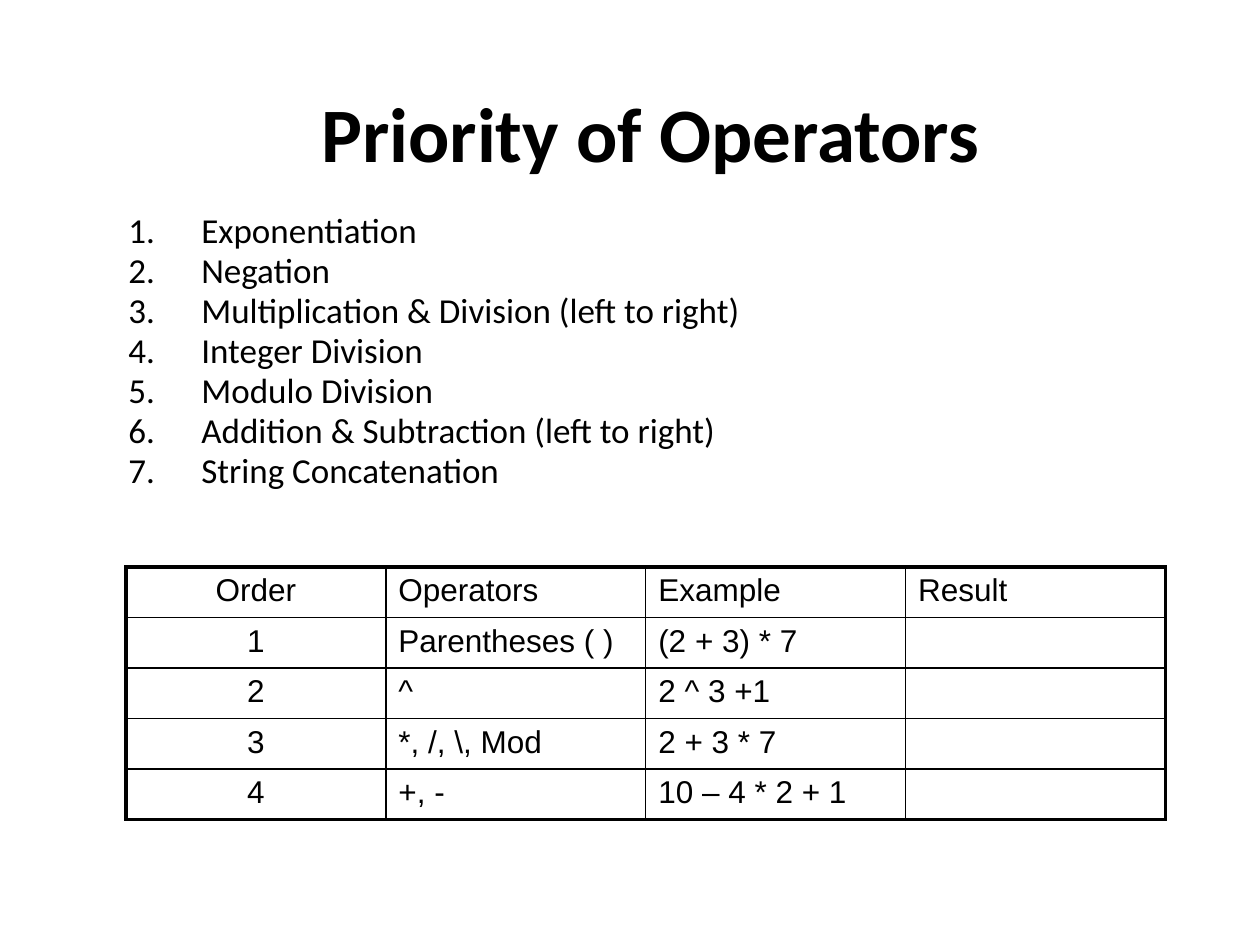
from lxml import etree
from pptx import Presentation
from pptx import util as u
from pptx.dml.color import RGBColor
from pptx.enum import text
from pptx.oxml import ns

BLACK = RGBColor(0x00, 0x00, 0x00)
THIN, THICK = u.Pt(1), u.Pt(2.25)

PRIORITIES = [
    "Exponentiation",
    "Negation",
    "Multiplication & Division (left to right)",
    "Integer Division",
    "Modulo Division",
    "Addition & Subtraction (left to right)",
    "String Concatenation",
]
OPERATORS = [
    ["Order", "Operators", "Example", "Result"],
    ["1", "Parentheses ( )", "(2 + 3) * 7", ""],
    ["2", "^", "2 ^ 3 +1", ""],
    ["3", "*, /, \\, Mod", "2 + 3 * 7", ""],
    ["4", "+, -", "10 – 4 * 2 + 1", ""],
]


def write(para, words, size, font, bold=False, align=text.PP_ALIGN.LEFT):
    para.alignment = align
    if words:
        span = para.add_run()
        span.text = words
        span.font.size = u.Pt(size)
        span.font.name = font
        span.font.bold = bold
        span.font.color.rgb = BLACK


def number(para, indent):
    properties = para._p.get_or_add_pPr()
    properties.set("marL", str(indent))
    properties.set("indent", str(-indent))
    etree.SubElement(properties, ns.qn("a:buFont"), typeface="+mj-lt")
    etree.SubElement(properties, ns.qn("a:buAutoNum"), type="arabicPeriod")


def border(cell, side, width):
    properties = cell._tc.get_or_add_tcPr()
    line = etree.SubElement(properties, ns.qn(f"a:ln{side}"), w=str(width))
    fill = etree.SubElement(line, ns.qn("a:solidFill"))
    etree.SubElement(fill, ns.qn("a:srgbClr"), val=str(BLACK))


class SlideBuilder:
    heading_font = "Calibri"
    table_font = "Arial"

    def __init__(self, slide):
        self.slide = slide

    def frame(self, left, top, width, height, anchor):
        box = self.slide.shapes.add_textbox(
            u.Inches(left), u.Inches(top), u.Inches(width), u.Inches(height))
        box.text_frame.word_wrap = True
        box.text_frame.vertical_anchor = anchor
        return box.text_frame

    def title(self, words, *place):
        frame = self.frame(*place, text.MSO_ANCHOR.MIDDLE)
        write(frame.paragraphs[0], words, 44, self.heading_font, bold=True,
              align=text.PP_ALIGN.CENTER)

    def numbered_list(self, items, *place):
        frame = self.frame(*place, text.MSO_ANCHOR.TOP)
        for index, item in enumerate(items):
            para = frame.add_paragraph() if index else frame.paragraphs[0]
            para.line_spacing = 0.8
            para.space_before = u.Pt(3.6)
            write(para, item, 20, self.heading_font)
            number(para, u.Inches(0.58))

    def table(self, rows, left, top, width, row_height):
        last_row, last_column = len(rows) - 1, len(rows[0]) - 1
        grid = self.slide.shapes.add_table(
            len(rows), len(rows[0]), u.Inches(left), u.Inches(top),
            u.Inches(width), u.Inches(row_height * len(rows))).table
        grid.first_row = grid.horz_banding = False
        for r, row in enumerate(rows):
            for c, words in enumerate(row):
                cell = grid.cell(r, c)
                align = text.PP_ALIGN.LEFT if c else text.PP_ALIGN.CENTER
                write(cell.text_frame.paragraphs[0], words, 18,
                      self.table_font, align=align)
                edges = {"L": c == 0, "R": c == last_column,
                         "T": r == 0, "B": r == last_row}
                for side, outer in edges.items():
                    border(cell, side, THICK if outer else THIN)
                cell.fill.background()


def main():
    deck = Presentation()
    deck.slide_width, deck.slide_height = u.Inches(10), u.Inches(7.5)
    builder = SlideBuilder(deck.slides.add_slide(deck.slide_layouts[6]))
    builder.title("Priority of Operators", 0.83, 0.42, 8.67, 1.25)
    builder.numbered_list(PRIORITIES, 0.92, 1.67, 8, 2.12)
    builder.table(OPERATORS, 1, 4.5, 8.25, 0.38)
    deck.save("out.pptx")


if __name__ == "__main__":
    main()
